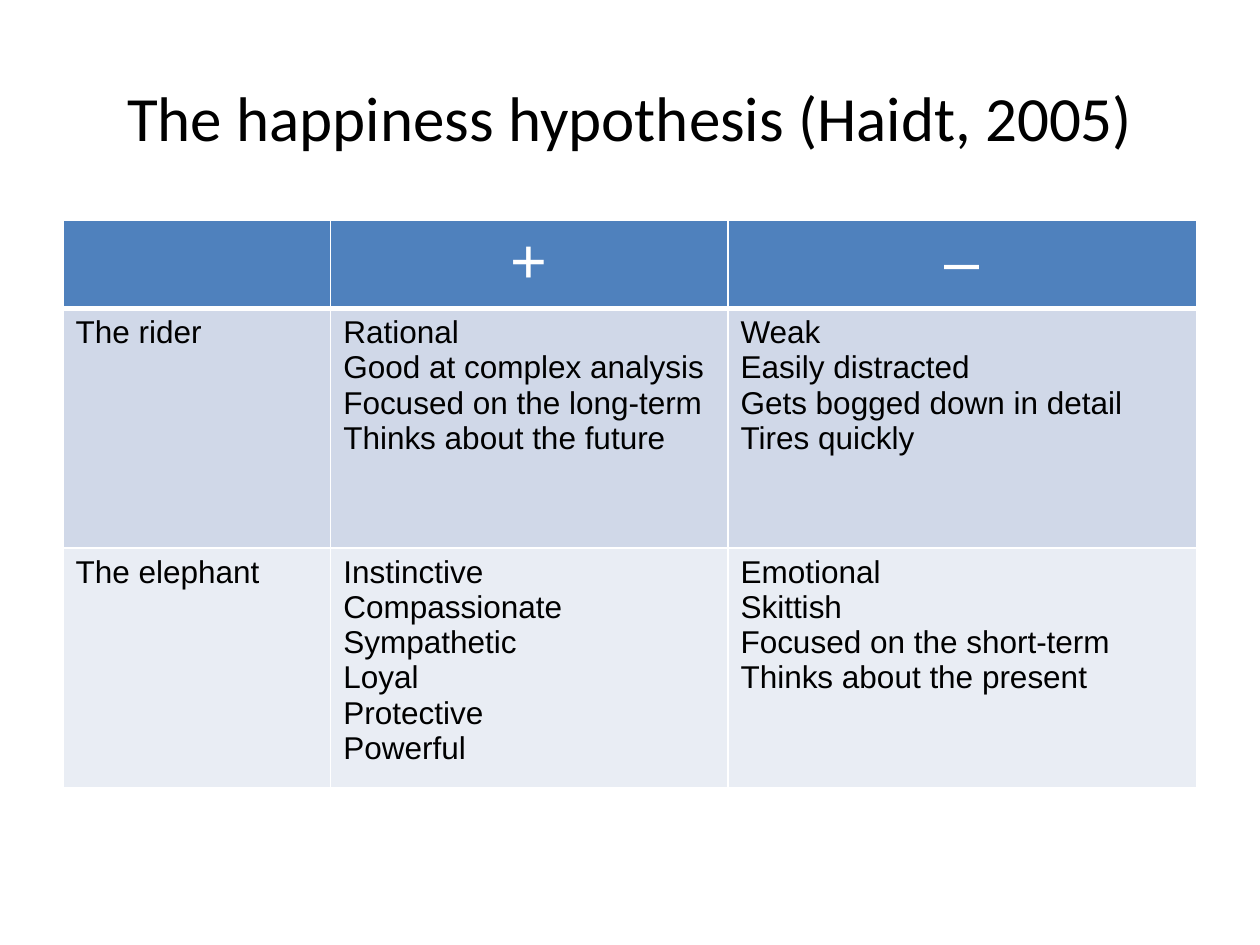
from lxml.etree import SubElement
from pptx import Presentation
from pptx.dml.color import RGBColor
from pptx.enum.text import MSO_ANCHOR, PP_ALIGN
from pptx.oxml.ns import qn
from pptx.util import Pt

COLORS = {"text": "000000", "white": "FFFFFF", "header": "4F81BD",
          "rider": "D0D8E8", "elephant": "E9EDF4"}


def style_text(frame, font, size, color, align):
    for para in frame.paragraphs:
        para.alignment = align
        for span in para.runs:
            span.font.name = font
            span.font.size = Pt(size)
            span.font.bold = False
            span.font.color.rgb = RGBColor.from_string(COLORS[color])


def style_cell(cell, fill, bottom_width):
    props = cell._tc.get_or_add_tcPr()
    for side, width in (("L", 1), ("R", 1), ("T", 1), ("B", bottom_width)):
        line = SubElement(props, qn(f"a:ln{side}"), w=str(Pt(width)))
        solid = SubElement(line, qn("a:solidFill"))
        SubElement(solid, qn("a:srgbClr"), val=COLORS["white"])
    cell.fill.solid()
    cell.fill.fore_color.rgb = RGBColor.from_string(COLORS[fill])


deck = Presentation()
deck.slide_width, deck.slide_height = Pt(720), Pt(540)
page = deck.slides.add_slide(deck.slide_layouts[6])

# Title
title = page.shapes.add_textbox(Pt(24.5), Pt(21.6), Pt(671), Pt(90))
title.text_frame.word_wrap = True
title.text_frame.vertical_anchor = MSO_ANCHOR.MIDDLE
title.text_frame.text = "The happiness hypothesis (Haidt, 2005)"
style_text(title.text_frame, "Calibri", 36, "text", PP_ALIGN.CENTER)

# Strengths and weaknesses: fill name, then the lines of each cell
rows = [
    ("header", [[], ["+"], ["–"]]),
    ("rider", [
        ["The rider"],
        ["Rational", "Good at complex analysis",
         "Focused on the long-term", "Thinks about the future"],
        ["Weak", "Easily distracted",
         "Gets bogged down in detail", "Tires quickly"],
    ]),
    ("elephant", [
        ["The elephant"],
        ["Instinctive", "Compassionate", "Sympathetic",
         "Loyal", "Protective", "Powerful"],
        ["Emotional", "Skittish",
         "Focused on the short-term", "Thinks about the present"],
    ]),
]
table = page.shapes.add_table(3, 3, Pt(36), Pt(126), Pt(648), Pt(324)).table
for column, width in zip(table.columns, (153, 227, 268)):
    column.width = Pt(width)
for row, height in zip(table.rows, (50.4, 136.8, 136.8)):
    row.height = Pt(height)

for row, (fill, contents) in zip(table.rows, rows):
    is_header = fill == "header"
    for cell, lines in zip(row.cells, contents):
        style_cell(cell, fill, 3 if is_header else 1)
        cell.text_frame.text = "\n".join(lines)
        if is_header:
            style_text(cell.text_frame, "Arial", 36, "white", PP_ALIGN.CENTER)
        else:
            style_text(cell.text_frame, "Arial", 18, "text", PP_ALIGN.LEFT)

deck.save("out.pptx")
